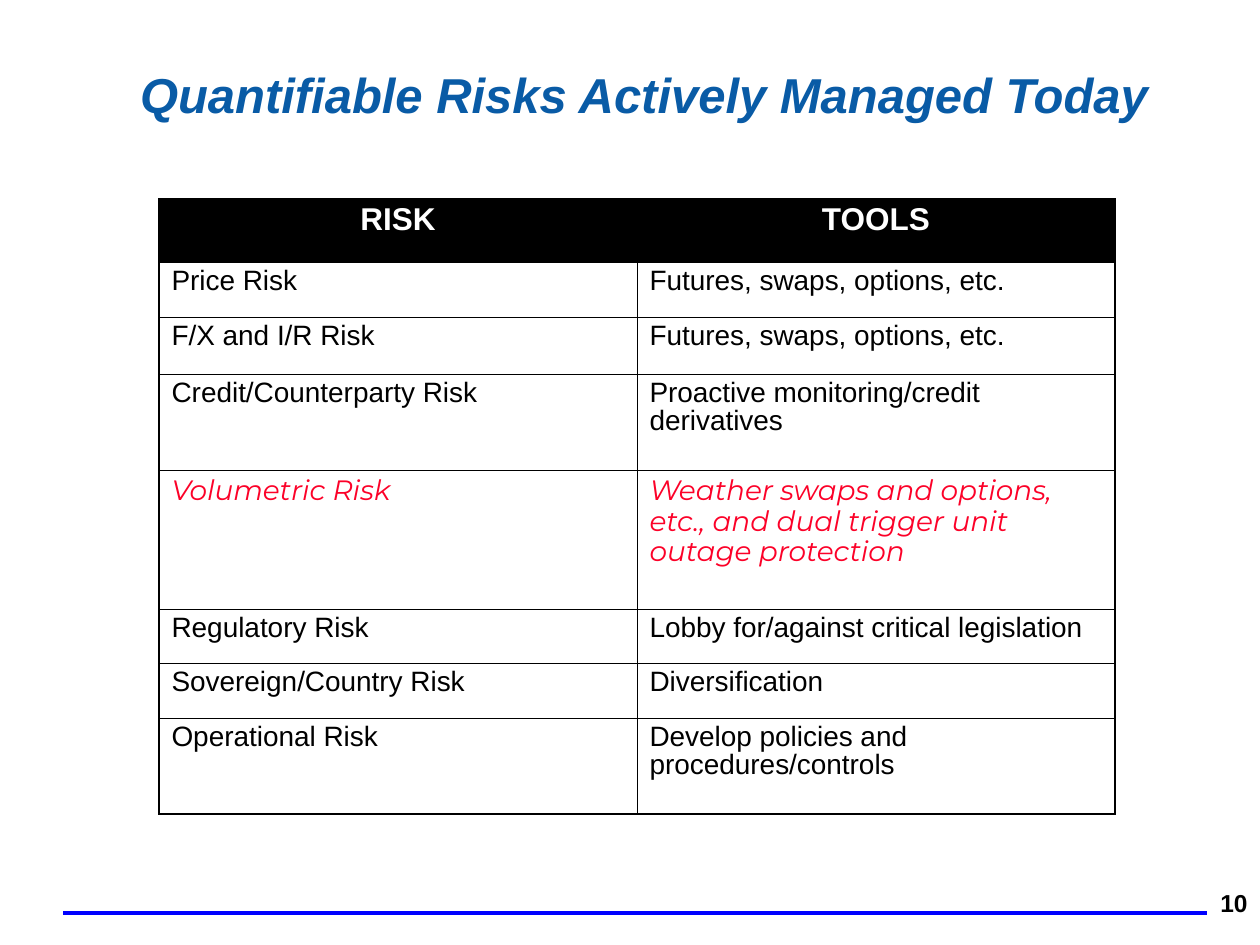
"""Build the slide that pairs each quantifiable risk with its tools."""
from dataclasses import dataclass

from lxml import etree
from pptx import Presentation
from pptx import util as u
from pptx.dml.color import RGBColor
from pptx.enum import shapes, text
from pptx.oxml import ns

EMU_PER_PX = 914400 / 126
COLORS = {
    "title": "095BA6",
    "ink": "000000",
    "paper": "FFFFFF",
    "accent": "FC0128",
    "rule": "0000FF",
}
OUTER_PT, INNER_PT = 1.08, 0.45
COLUMN_WIDTH = 478


@dataclass(frozen=True)
class Style:
    size: int
    color: str = "ink"
    name: str = "Arial"
    bold: bool = False
    italic: bool = False
    align: text.PP_ALIGN = text.PP_ALIGN.LEFT
    spacing: float = 0.9


@dataclass(frozen=True)
class Label:
    words: str
    left: int
    top: int
    width: int
    height: int
    anchor: text.MSO_ANCHOR
    style: Style


@dataclass(frozen=True)
class Row:
    risk: str
    tools: str
    height: int
    style: Style = Style(16)
    fill: str = ""


HEADER = Style(18, "paper", bold=True, align=text.PP_ALIGN.CENTER)
EMPHASIS = Style(16, "accent", "Montserrat", italic=True)
ROWS = [
    Row("RISK", "TOOLS", 63, HEADER, "ink"),
    Row("Price Risk", "Futures, swaps, options, etc.", 55),
    Row("F/X and I/R Risk", "Futures, swaps, options, etc.", 57),
    Row("Credit/Counterparty Risk", "Proactive monitoring/credit derivatives", 96),
    Row("Volumetric Risk",
        "Weather swaps and options, etc., and dual trigger unit outage protection",
        139, EMPHASIS),
    Row("Regulatory Risk", "Lobby for/against critical legislation", 54),
    Row("Sovereign/Country Risk", "Diversification", 55),
    Row("Operational Risk", "Develop policies and procedures/controls", 96),
]
LABELS = [
    Label("Quantifiable Risks Actively Managed Today", 45, 15, 1198, 115,
          text.MSO_ANCHOR.BOTTOM,
          Style(28, "title", bold=True, italic=True, align=text.PP_ALIGN.CENTER)),
    Label("10", 998, 882, 262, 63, text.MSO_ANCHOR.TOP,
          Style(14, bold=True, align=text.PP_ALIGN.RIGHT, spacing=1.0)),
]


def px(length: int) -> u.Emu:
    return u.Emu(round(length * EMU_PER_PX))


def rgb(key: str) -> RGBColor:
    return RGBColor.from_string(COLORS[key])


def write(frame, words: str, style: Style) -> None:
    frame.text = words
    para = frame.paragraphs[0]
    para.alignment = style.align
    para.line_spacing = style.spacing
    for span in para.runs:
        span.font.size = u.Pt(style.size)
        span.font.name = style.name
        span.font.bold = style.bold
        span.font.italic = style.italic
        span.font.color.rgb = rgb(style.color)


def add_label(page, label: Label) -> None:
    box = page.shapes.add_textbox(
        px(label.left), px(label.top), px(label.width), px(label.height))
    box.text_frame.word_wrap = True
    box.text_frame.vertical_anchor = label.anchor
    write(box.text_frame, label.words, label.style)


def add_border(cell, side: str, points: float) -> None:
    properties = cell._tc.get_or_add_tcPr()
    line = etree.SubElement(properties, ns.qn(f"a:ln{side}"), w=str(u.Pt(points)))
    fill = etree.SubElement(line, ns.qn("a:solidFill"))
    etree.SubElement(fill, ns.qn("a:srgbClr"), val=COLORS["ink"])


def add_risk_table(page, left: int, top: int, rows: list[Row]) -> None:
    height = sum(row.height for row in rows)
    table = page.shapes.add_table(
        len(rows), 2, px(left), px(top), px(2 * COLUMN_WIDTH), px(height)).table
    table.first_row = table.horz_banding = False
    for column in table.columns:
        column.width = px(COLUMN_WIDTH)
    for row_index, row in enumerate(rows):
        table.rows[row_index].height = px(row.height)
        for column_index, words in enumerate((row.risk, row.tools)):
            cell = table.cell(row_index, column_index)
            write(cell.text_frame, words, row.style)
            outer_sides = {
                "L": column_index == 0,
                "R": column_index == 1,
                "T": row_index == 0,
                "B": row_index == len(rows) - 1,
            }
            for side, is_outer in outer_sides.items():
                add_border(cell, side, OUTER_PT if is_outer else INNER_PT)
            if row.fill:
                cell.fill.solid()
                cell.fill.fore_color.rgb = rgb(row.fill)
            else:
                cell.fill.background()


def add_footer_rule(page, left: int, right: int, y: int) -> None:
    rule = page.shapes.add_connector(
        shapes.MSO_CONNECTOR.STRAIGHT, px(left), px(y), px(right), px(y))
    rule.line.color.rgb = rgb("rule")
    rule.line.width = u.Pt(2.25)
    etree.SubElement(rule._element.spPr, ns.qn("a:effectLst"))


def main() -> None:
    deck = Presentation()
    deck.slide_width, deck.slide_height = px(1260), px(945)
    page = deck.slides.add_slide(deck.slide_layouts[6])
    add_footer_rule(page, 63, 1207, 913)
    add_risk_table(page, 159, 199, ROWS)
    for label in LABELS:
        add_label(page, label)
    deck.save("out.pptx")


if __name__ == "__main__":
    main()
